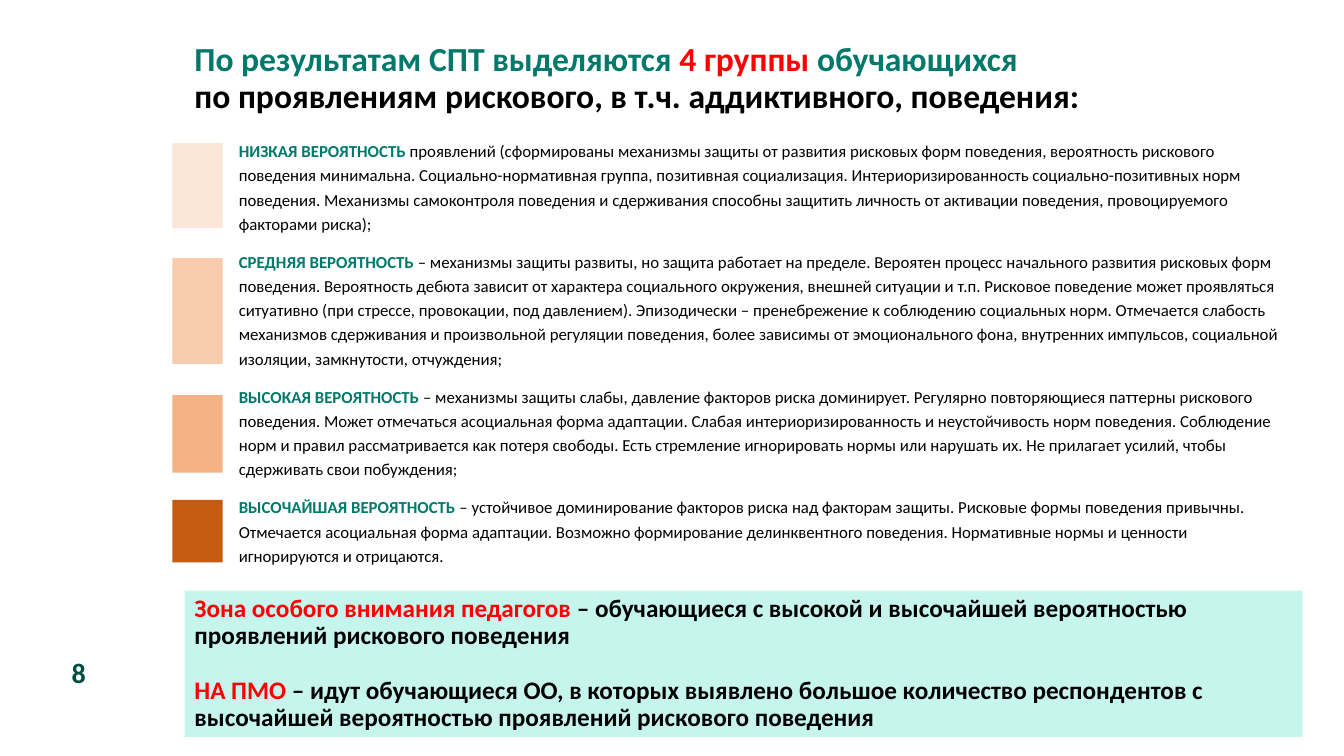
from pptx import Presentation
from pptx.dml.color import RGBColor
from pptx.enum.shapes import MSO_SHAPE
from pptx.enum.text import MSO_ANCHOR, PP_ALIGN
from pptx.util import Inches, Pt

TEAL = RGBColor(0x00, 0x79, 0x6B)
DARK = RGBColor(0x00, 0x4D, 0x40)
RED = RGBColor(0xFF, 0x00, 0x00)
BLACK = RGBColor(0x00, 0x00, 0x00)
MINT = RGBColor(0xC6, 0xF5, 0xED)
PALE = RGBColor(0xFB, 0xE5, 0xD6)
PEACH = RGBColor(0xF8, 0xCB, 0xAD)
AMBER = RGBColor(0xF4, 0xB1, 0x83)
RUST = RGBColor(0xC5, 0x5A, 0x11)

LEVELS = [
    (1.42, 0.84, PALE, "НИЗКАЯ ВЕРОЯТНОСТЬ ",
     "проявлений (сформированы механизмы защиты от развития рисковых форм поведения, "
     "вероятность рискового поведения минимальна. Социально-нормативная группа, "
     "позитивная социализация. Интериоризированность социально-позитивных норм "
     "поведения. Механизмы самоконтроля поведения и сдерживания способны защитить "
     "личность от активации поведения, провоцируемого факторами риска);"),
    (2.56, 1.05, PEACH, "СРЕДНЯЯ ВЕРОЯТНОСТЬ ",
     "– механизмы защиты развиты, но защита работает на пределе. Вероятен процесс "
     "начального развития рисковых форм поведения. Вероятность дебюта зависит от "
     "характера социального окружения, внешней ситуации и т.п. Рисковое поведение "
     "может проявляться ситуативно (при стрессе, провокации, под давлением). "
     "Эпизодически – пренебрежение к соблюдению социальных норм. Отмечается слабость "
     "механизмов сдерживания и произвольной регуляции поведения, более зависимы от "
     "эмоционального фона, внутренних импульсов, социальной изоляции, замкнутости, "
     "отчуждения;"),
    (3.92, 0.77, AMBER, "ВЫСОКАЯ ВЕРОЯТНОСТЬ ",
     "– механизмы защиты слабы, давление факторов риска доминирует. Регулярно "
     "повторяющиеся паттерны рискового поведения. Может отмечаться асоциальная форма "
     "адаптации. Слабая интериоризированность и неустойчивость норм поведения. "
     "Соблюдение норм и правил рассматривается как потеря свободы. Есть стремление "
     "игнорировать нормы или нарушать их. Не прилагает усилий, чтобы сдерживать свои "
     "побуждения;"),
    (4.96, 0.62, RUST, "ВЫСОЧАЙШАЯ ВЕРОЯТНОСТЬ ",
     "– устойчивое доминирование факторов риска над факторам защиты. Рисковые формы "
     "поведения привычны. Отмечается асоциальная форма адаптации. Возможно "
     "формирование делинквентного поведения. Нормативные нормы и ценности "
     "игнорируются и отрицаются."),
]


class Painter:
    font = "Calibri"

    def __init__(self, slide):
        self.slide = slide

    def block(self, left, top, width, height, color):
        shape = self.slide.shapes.add_shape(
            MSO_SHAPE.RECTANGLE, Inches(left), Inches(top), Inches(width), Inches(height))
        shape.shadow.inherit = False
        shape.fill.solid()
        shape.fill.fore_color.rgb = color
        shape.line.fill.background()
        return shape

    def box(self, left, top, width, height):
        return self.slide.shapes.add_textbox(
            Inches(left), Inches(top), Inches(width), Inches(height))

    def label(self, shape, paras, size, lead=1.0, gap=0, bold=True,
              anchor=MSO_ANCHOR.TOP):
        frame = shape.text_frame
        frame.word_wrap = True
        frame.vertical_anchor = anchor
        for index, runs in enumerate(paras):
            para = frame.add_paragraph() if index else frame.paragraphs[0]
            para.alignment = PP_ALIGN.LEFT
            para.line_spacing = lead
            para.space_before = Pt(gap if index else 0)
            para.font.name = self.font
            para.font.size = Pt(size)
            if bold:
                para.font.bold = True
            for part, (text, color) in enumerate(runs):
                if text == "\n":
                    para.add_line_break()
                    continue
                run = para.add_run()
                run.text = text
                run.font.color.rgb = color
                if not bold:
                    run.font.bold = part == 0
        return frame


def main():
    deck = Presentation()
    deck.slide_width, deck.slide_height = Inches(13.33), Inches(7.5)
    page = Painter(deck.slides.add_slide(deck.slide_layouts[6]))

    title = [("По результатам СПТ выделяются ", TEAL), ("4 группы ", RED),
             ("обучающихся", TEAL), ("\n", BLACK),
             ("по проявлениям рискового, в т.ч. аддиктивного, поведения:", BLACK)]
    page.label(page.box(1.83, 0.26, 10.91, 1.05), [title], 24, 0.9,
               anchor=MSO_ANCHOR.MIDDLE)

    levels = [[(name, TEAL), (text, BLACK)] for _, _, _, name, text in LEVELS]
    page.label(page.box(2.27, 1.31, 10.65, 4.46), levels, 12, 1.2, 10, bold=False)

    notice = [
        [("Зона особого внимания педагогов ", RED),
         ("– обучающиеся с высокой и высочайшей вероятностью проявлений "
          "рискового поведения", BLACK)],
        [("НА ПМО ", RED),
         ("– идут обучающиеся ОО, в которых выявлено большое количество "
          "респондентов с высочайшей вероятностью проявлений рискового поведения", BLACK)],
    ]
    page.label(page.block(1.83, 5.86, 11.09, 1.45, MINT), notice, 18, 0.9, 19.8,
               anchor=MSO_ANCHOR.MIDDLE)

    frame = page.label(page.box(0.71, 6.5, 0.38, 0.34), [[("8", DARK)]], 20)
    frame.margin_left = frame.margin_right = frame.margin_top = frame.margin_bottom = 0

    for top, height, color, _, _ in LEVELS:
        page.block(1.71, top, 0.5, height, color)

    deck.save("out.pptx")


if __name__ == "__main__":
    main()
